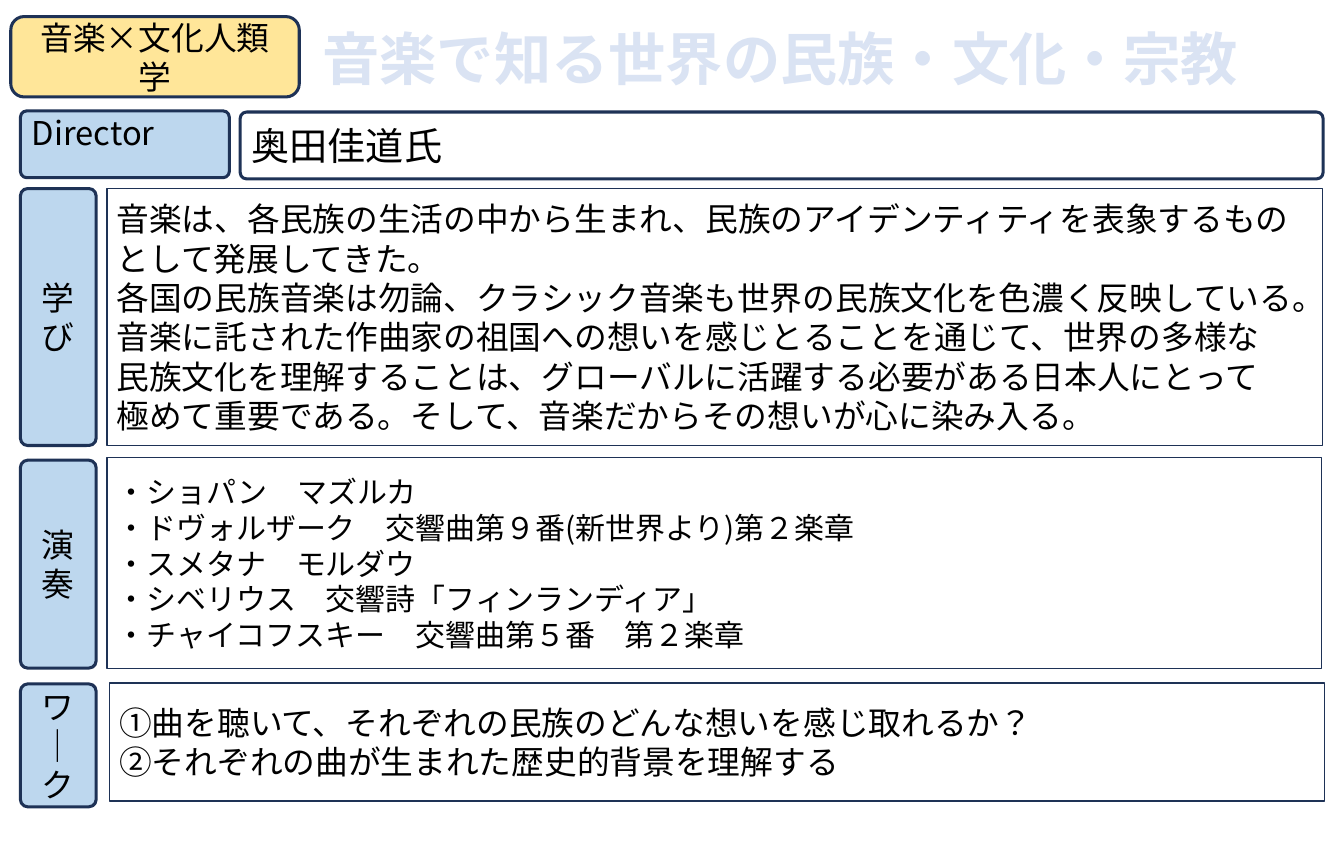
from pptx import Presentation
from pptx.dml.color import RGBColor
from pptx.enum.lang import MSO_LANGUAGE_ID as Language
from pptx.enum.shapes import MSO_SHAPE as Shape
from pptx.enum.text import MSO_ANCHOR as Anchor, PP_ALIGN as Align
from pptx.oxml.ns import qn
from pptx.util import Cm, Pt
from lxml.etree import SubElement

FONT = "Noto Sans CJK JP"
NAVY = RGBColor(0x1E, 0x32, 0x56)
YELLOW = RGBColor(0xFF, 0xE6, 0x99)
BLUE = RGBColor(0xBD, 0xD7, 0xEE)
PALE_BLUE = RGBColor(0xDA, 0xE3, 0xF3)
WHITE = RGBColor(0xFF, 0xFF, 0xFF)
BLACK = RGBColor(0, 0, 0)


def write_lines(shape, lines, size, align=Align.LEFT, color=BLACK, bold=False):
    frame = shape.text_frame
    frame.word_wrap = True
    frame.vertical_anchor = Anchor.MIDDLE
    for index, line in enumerate(lines):
        paragraph = frame.add_paragraph() if index else frame.paragraphs[0]
        paragraph.alignment = align
        run = paragraph.add_run()
        run.text = line
        font = run.font
        font.name, font.size, font.bold = FONT, Pt(size), bold
        font.color.rgb = color
        font.language_id = Language.JAPANESE
        # East Asian typeface
        SubElement(run._r.get_or_add_rPr(), qn("a:ea"), typeface=FONT)


def add_box(kind, position, fill, line_width, corner=None):
    shape = slide.shapes.add_shape(kind, *[Cm(value) for value in position])
    shape.shadow.inherit = False
    if fill is None:
        shape.fill.background()
    else:
        shape.fill.solid()
        shape.fill.fore_color.rgb = fill
    shape.line.color.rgb = NAVY
    shape.line.width = Pt(line_width)
    if corner is not None:
        shape.adjustments[0] = corner
    return shape


presentation = Presentation()
presentation.slide_width = Cm(34.8)
presentation.slide_height = Cm(22.1)
slide = presentation.slides.add_slide(presentation.slide_layouts[6])

# Header: subject badge and title
badge = add_box(Shape.ROUNDED_RECTANGLE, (0.28, 0.43, 7.47, 2.08), YELLOW, 2.25)
write_lines(badge, ["音楽×文化人類学"], 24, Align.CENTER)

title = slide.shapes.add_textbox(Cm(8.1), Cm(0.3), Cm(26), Cm(2.4))
write_lines(title, ["音楽で知る世界の民族・文化・宗教"], 42, color=PALE_BLUE, bold=True)

# Director row
director = add_box(Shape.ROUNDED_RECTANGLE, (0.53, 2.87, 5.41, 1.73), BLUE, 2.25, 0.095)
write_lines(director, ["Director"], 24)
director.text_frame.vertical_anchor = Anchor.TOP
director.text_frame.margin_top = 0

name = add_box(Shape.ROUNDED_RECTANGLE, (6.22, 2.9, 28.04, 1.73), WHITE, 2.25, 0.095)
write_lines(name, ["奥田佳道氏"], 28)

# Sections: label, label top and height, content position, text size, lines
sections = [
    ("学び", 4.88, 6.65, (2.77, 4.88, 31.47, 6.65), 24, [
        "音楽は、各民族の生活の中から生まれ、民族のアイデンティティを表象するもの",
        "として発展してきた。",
        "各国の民族音楽は勿論、クラシック音楽も世界の民族文化を色濃く反映している。",
        "音楽に託された作曲家の祖国への想いを感じとることを通じて、世界の多様な",
        "民族文化を理解することは、グローバルに活躍する必要がある日本人にとって",
        "極めて重要である。そして、音楽だからその想いが心に染み入る。",
    ]),
    ("演奏", 11.91, 5.38, (2.77, 11.84, 31.45, 5.46), 22, [
        "・ショパン　マズルカ",
        "・ドヴォルザーク　交響曲第９番(新世界より)第２楽章",
        "・スメタナ　モルダウ",
        "・シベリウス　交響詩「フィンランディア」",
        "・チャイコフスキー　交響曲第５番　第２楽章",
    ]),
    ("ワ│ク", 17.7, 3.18, (2.84, 17.68, 31.45, 3.05), 24, [
        "①曲を聴いて、それぞれの民族のどんな想いを感じ取れるか？",
        "②それぞれの曲が生まれた歴史的背景を理解する",
    ]),
]
for label_text, top, height, position, size, lines in sections:
    label = add_box(Shape.ROUNDED_RECTANGLE, (0.53, top, 1.96, height), BLUE, 2.25, 0.095)
    write_lines(label, [label_text], 24, Align.CENTER)
    content = add_box(Shape.RECTANGLE, position, None, 1)
    write_lines(content, lines, size)

presentation.save("out.pptx")
